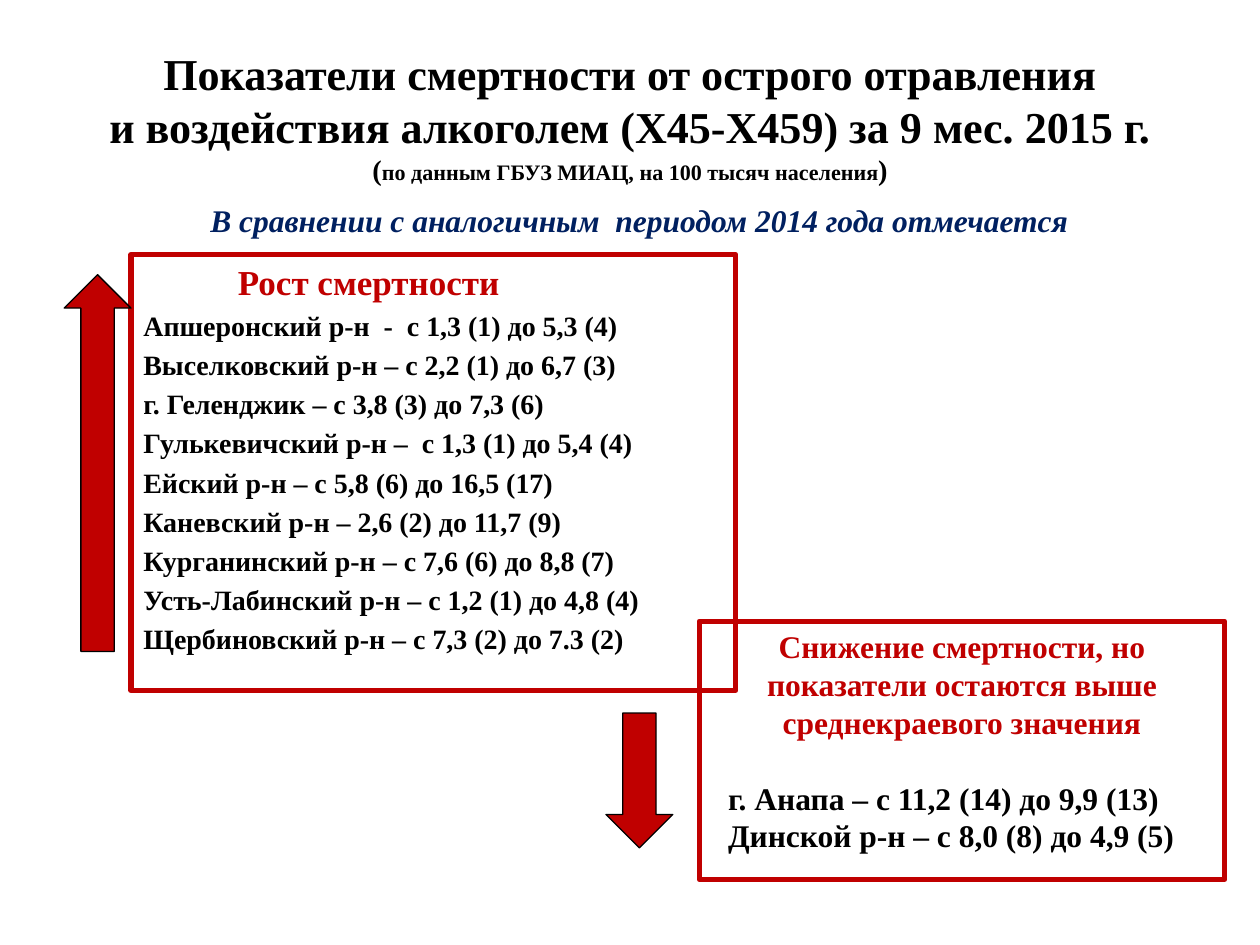
from pptx import Presentation
from pptx.dml.color import RGBColor
from pptx.enum.shapes import MSO_SHAPE
from pptx.enum.text import MSO_ANCHOR, PP_ALIGN
from pptx.util import Inches, Pt

RED = RGBColor(0xC0, 0x00, 0x00)
NAVY = RGBColor(0x00, 0x20, 0x60)
BLACK = RGBColor(0x00, 0x00, 0x00)
RECT, UP, DOWN = MSO_SHAPE.RECTANGLE, MSO_SHAPE.UP_ARROW, MSO_SHAPE.DOWN_ARROW
LEFT, CENTER = PP_ALIGN.LEFT, PP_ALIGN.CENTER
TOP, MIDDLE = MSO_ANCHOR.TOP, MSO_ANCHOR.MIDDLE

GROWTH = [
    "Апшеронский р-н  -  с 1,3 (1) до 5,3 (4)",
    "Выселковский р-н – с 2,2 (1) до 6,7 (3)",
    "г. Геленджик – с 3,8 (3) до 7,3 (6)",
    "Гулькевичский р-н –  с 1,3 (1) до 5,4 (4)",
    "Ейский р-н – с 5,8 (6) до 16,5 (17)",
    "Каневский р-н – 2,6 (2) до 11,7 (9)",
    "Курганинский р-н – с 7,6 (6) до 8,8 (7)",
    "Усть-Лабинский р-н – с 1,2 (1) до 4,8 (4)",
    "Щербиновский р-н – с 7,3 (2) до 7.3 (2)",
]
DECLINE = ["г. Анапа – с 11,2 (14) до 9,9 (13)", "Динской р-н – с 8,0 (8) до 4,9 (5)"]


class Deck:
    """Slide builder that keeps the shared font and the current slide."""

    font = "Times New Roman"

    def __init__(self):
        self.prs = Presentation()
        self.prs.slide_width, self.prs.slide_height = Inches(10), Inches(7.5)
        self.s = self.prs.slides.add_slide(self.prs.slide_layouts[6])

    def text(self, x, y, w, h, anchor=TOP):
        tf = self.s.shapes.add_textbox(*map(Inches, (x, y, w, h))).text_frame
        tf.word_wrap, tf.vertical_anchor = True, anchor
        return tf

    def shape(self, kind, x, y, w, h, line, width, fill=None):
        sp = self.s.shapes.add_shape(kind, *map(Inches, (x, y, w, h)))
        sp.shadow.inherit = False
        sp.line.color.rgb, sp.line.width = line, Pt(width)
        if fill is None:
            sp.fill.background()
        else:
            sp.fill.solid()
            sp.fill.fore_color.rgb = fill
        return sp

    def frame(self, x, y, w, h):
        tf = self.shape(RECT, x, y, w, h, RED, 3).text_frame
        tf.word_wrap, tf.vertical_anchor = True, TOP
        return tf

    def arrow(self, kind, x, y, h):
        self.shape(kind, x, y, 0.53, h, BLACK, 0.75, RED)

    def para(self, tf, text, size, color=BLACK, align=LEFT, before=0, indent=0, italic=False):
        p = tf.paragraphs[0]
        if p.runs:
            p = tf.add_paragraph()
        p.alignment, p.space_before = align, Pt(before)
        if indent:
            p._p.get_or_add_pPr().set("marL", str(Inches(indent)))
        p.font.name, p.font.size, p.font.bold = self.font, Pt(size), True
        p.font.italic, p.font.color.rgb = italic, color
        p.add_run().text = text
        return p


def main():
    deck = Deck()

    title = deck.text(0.5, 0.3, 9, 1.25, MIDDLE)
    for line in ("Показатели смертности от острого отравления",
                 "и воздействия алкоголем (X45-X459) за 9 мес. 2015 г."):
        deck.para(title, line, 25.2, align=CENTER)
    p = deck.para(title, "(", 16.2, align=CENTER)
    r = p.add_run()
    r.text, r.font.size = "по данным ГБУЗ МИАЦ, на 100 тысяч населения", Pt(12.6)
    p.add_run().text = ")"

    growth = deck.frame(1.04, 2.02, 4.8, 3.46)
    deck.para(growth, "Рост смертности", 20, RED, indent=0.75)
    for line in GROWTH:
        deck.para(growth, line, 16, before=3.2)

    decline = deck.frame(5.55, 4.93, 4.17, 2.05)
    deck.para(decline, "Снижение смертности, но показатели остаются выше "
              "среднекраевого значения", 18, RED, CENTER)
    for line, before in zip(DECLINE, (21.6, 0)):
        deck.para(decline, line, 18, before=before, indent=0.13)

    subtitle = deck.text(0.98, 1.55, 8.19, 0.47)
    deck.para(subtitle, "В сравнении с аналогичным  периодом 2014 года отмечается",
              18, NAVY, CENTER, italic=True)

    deck.arrow(UP, 0.51, 2.18, 2.99)
    deck.arrow(DOWN, 4.81, 5.66, 1.07)
    deck.prs.save("out.pptx")


if __name__ == "__main__":
    main()
